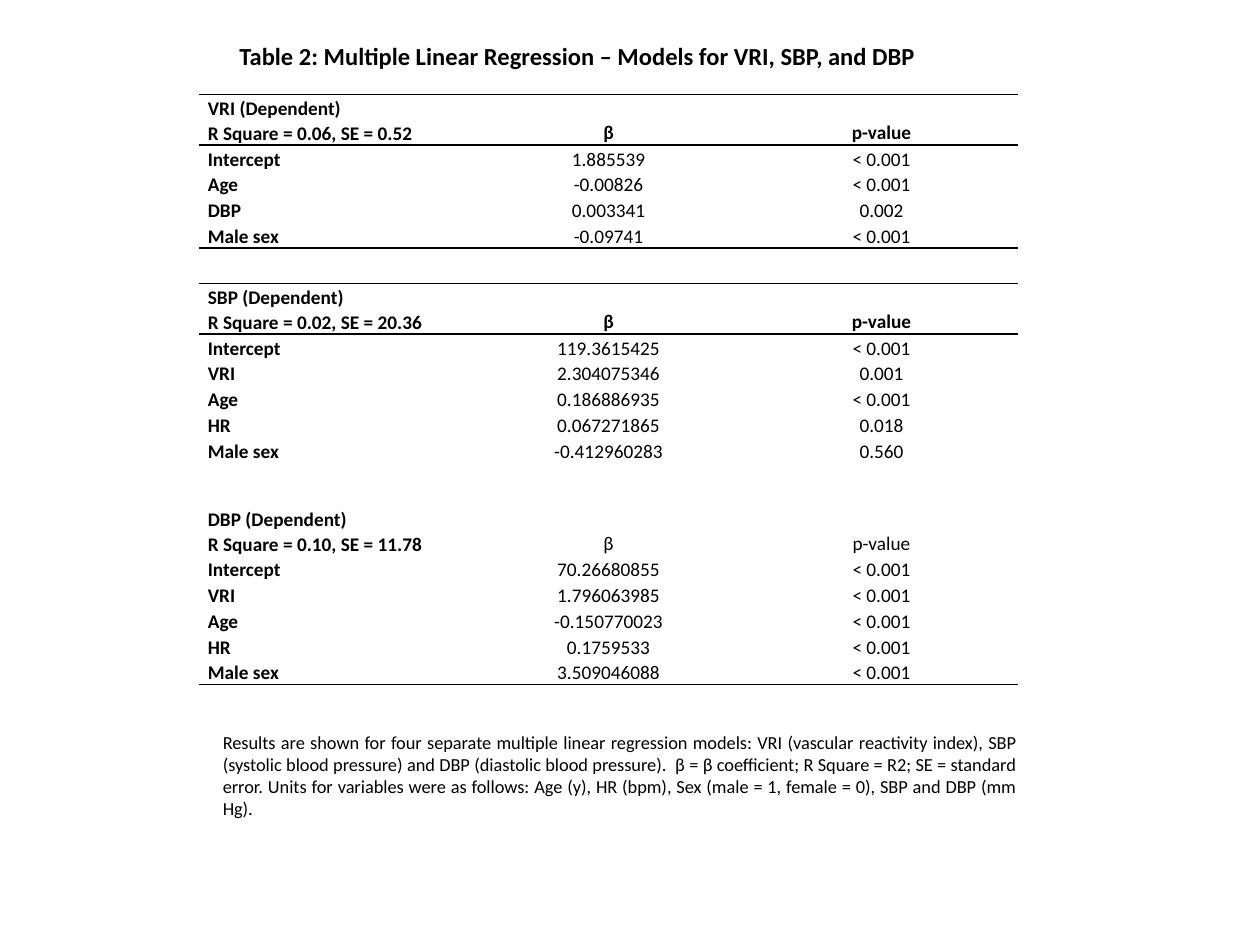
"""Build a slide with regression tables for VRI, SBP and DBP."""
from dataclasses import dataclass

from lxml import etree
from pptx import Presentation
from pptx.dml.color import RGBColor
from pptx.enum.text import MSO_ANCHOR, MSO_AUTO_SIZE, PP_ALIGN
from pptx.oxml.ns import qn
from pptx.slide import Slide
from pptx.table import Table, _Cell
from pptx.text.text import _Paragraph
from pptx.util import Inches, Pt

LEFT, CENTER, JUSTIFY = PP_ALIGN.LEFT, PP_ALIGN.CENTER, PP_ALIGN.JUSTIFY
TOP, MIDDLE, BOTTOM = MSO_ANCHOR.TOP, MSO_ANCHOR.MIDDLE, MSO_ANCHOR.BOTTOM
FIT_SHAPE = MSO_AUTO_SIZE.SHAPE_TO_FIT_TEXT

BLACK = RGBColor(0x00, 0x00, 0x00)
FONT = "Calibri"
PLAIN_TABLE_STYLE = "{2D5ABB26-0587-4C30-8999-92F81FD0307C}"
TITLE_ONLY_LAYOUT = 5

TABLE_LEFT, TABLE_WIDTH = 1.58, 6.5
HEADER_HEIGHT, ROW_HEIGHT, GAP_HEIGHT = 0.4, 0.2, 0.34
LINE_SPACING = 1.06


@dataclass(frozen=True)
class Model:
    dependent: str
    fit: str
    coefficients: list[tuple[str, str, str]]
    ruled_header: bool = True
    ruled_end: bool = True


VRI_MODEL = Model("VRI (Dependent)", "R Square = 0.06, SE = 0.52", [
    ("Intercept", "1.885539", "< 0.001"),
    ("Age", "-0.00826", "< 0.001"),
    ("DBP", "0.003341", "0.002"),
    ("Male sex", "-0.09741", "< 0.001"),
])
SBP_MODEL = Model("SBP (Dependent)", "R Square = 0.02, SE = 20.36", [
    ("Intercept", "119.3615425", "< 0.001"),
    ("VRI", "2.304075346", "0.001"),
    ("Age", "0.186886935", "< 0.001"),
    ("HR", "0.067271865", "0.018"),
    ("Male sex", "-0.412960283", "0.560"),
], ruled_end=False)
DBP_MODEL = Model("DBP (Dependent)", "R Square = 0.10, SE = 11.78", [
    ("Intercept", "70.26680855", "< 0.001"),
    ("VRI", "1.796063985", "< 0.001"),
    ("Age", "-0.150770023", "< 0.001"),
    ("HR", "0.1759533", "< 0.001"),
    ("Male sex", "3.509046088", "< 0.001"),
], ruled_header=False)

TITLE = "Table 2: Multiple Linear Regression – Models for VRI, SBP, and DBP"
NOTE = (
    "Results are shown for four separate multiple linear regression models: "
    "VRI (vascular reactivity index), SBP (systolic blood pressure) and DBP "
    "(diastolic blood pressure).  β = β coefficient; R Square = R2; "
    "SE = standard error. Units for variables were as follows: Age (y), "
    "HR (bpm), Sex (male = 1, female = 0), SBP and DBP (mm Hg). "
)


def add_run(paragraph: _Paragraph, text: str, size: float, bold: bool = False) -> None:
    run = paragraph.add_run()
    run.text = text
    run.font.name = FONT
    run.font.size = Pt(size)
    run.font.bold = bold
    run.font.color.rgb = BLACK


def rule_cell(cell: _Cell, *sides: str) -> None:
    properties = cell._tc.get_or_add_tcPr()
    for position, side in enumerate(sides):
        line = etree.Element(qn(f"a:{side}"), w=str(Pt(1)))
        fill = etree.SubElement(line, qn("a:solidFill"))
        etree.SubElement(fill, qn("a:srgbClr"), val=str(BLACK))
        properties.insert(position, line)


def write_cell(cell: _Cell, lines: list[str], bold: bool, alignment: PP_ALIGN,
               anchor: MSO_ANCHOR = TOP) -> None:
    cell.vertical_anchor = anchor
    frame = cell.text_frame
    for index, text in enumerate(lines):
        paragraph = frame.add_paragraph() if index else frame.paragraphs[0]
        paragraph.alignment = alignment
        paragraph.line_spacing = LINE_SPACING
        add_run(paragraph, text, 11, bold)


def write_model(table: Table, model: Model, first_row: int) -> None:
    header = [table.cell(first_row, column) for column in range(3)]
    write_cell(header[0], [model.dependent, model.fit], True, LEFT)
    for cell, text in zip(header[1:], ("β", "p-value")):
        write_cell(cell, [text], model.ruled_header, CENTER, BOTTOM)
    if model.ruled_header:
        for cell in header:
            rule_cell(cell, "lnT", "lnB")
    last_row = first_row + len(model.coefficients)
    for row, values in enumerate(model.coefficients, first_row + 1):
        for column, text in enumerate(values):
            cell = table.cell(row, column)
            is_name = column == 0
            write_cell(cell, [text], is_name, LEFT if is_name else CENTER)
            if row == last_row and model.ruled_end:
                rule_cell(cell, "lnB")


def add_model_table(slide: Slide, top: float, models: list[Model]) -> None:
    heights: list[float] = []
    starts: list[int] = []
    for model in models:
        if heights:
            heights.append(GAP_HEIGHT)
        starts.append(len(heights))
        heights += [HEADER_HEIGHT] + [ROW_HEIGHT] * len(model.coefficients)
    table = slide.shapes.add_table(
        len(heights), 3, Inches(TABLE_LEFT), Inches(top),
        Inches(TABLE_WIDTH), Inches(sum(heights))).table
    table.first_row = table.horz_banding = False
    table._tbl.tblPr.find(qn("a:tableStyleId")).text = PLAIN_TABLE_STYLE
    for row, height in zip(table.rows, heights):
        row.height = Inches(height)
    for cell in table.iter_cells():
        cell.margin_left = cell.margin_right = Inches(0.07)
        cell.margin_top, cell.margin_bottom = Inches(0.01), 0
        cell.fill.background()
    for model, start in zip(models, starts):
        write_model(table, model, start)


def add_title(slide: Slide) -> None:
    title = slide.shapes.title
    title.left, title.top = Inches(1.8), Inches(0.27)
    title.width, title.height = Inches(6.37), Inches(0.34)
    frame = title.text_frame
    frame.auto_size = FIT_SHAPE
    frame.vertical_anchor = MIDDLE
    frame.paragraphs[0].alignment = LEFT
    add_run(frame.paragraphs[0], TITLE, 14, True)


def add_note(slide: Slide) -> None:
    note = slide.shapes.add_textbox(Inches(1.67), Inches(5.75), Inches(6.5), Inches(0.81))
    frame = note.text_frame
    frame.word_wrap = True
    frame.auto_size = FIT_SHAPE
    frame.paragraphs[0].alignment = JUSTIFY
    add_run(frame.paragraphs[0], NOTE, 10.5)


def main() -> None:
    presentation = Presentation()
    presentation.slide_width, presentation.slide_height = Inches(10), Inches(7.5)
    slide = presentation.slides.add_slide(presentation.slide_layouts[TITLE_ONLY_LAYOUT])
    add_title(slide)
    add_model_table(slide, 0.75, [VRI_MODEL])
    add_model_table(slide, 2.25, [SBP_MODEL, DBP_MODEL])
    add_note(slide)
    presentation.save("out.pptx")


if __name__ == "__main__":
    main()
